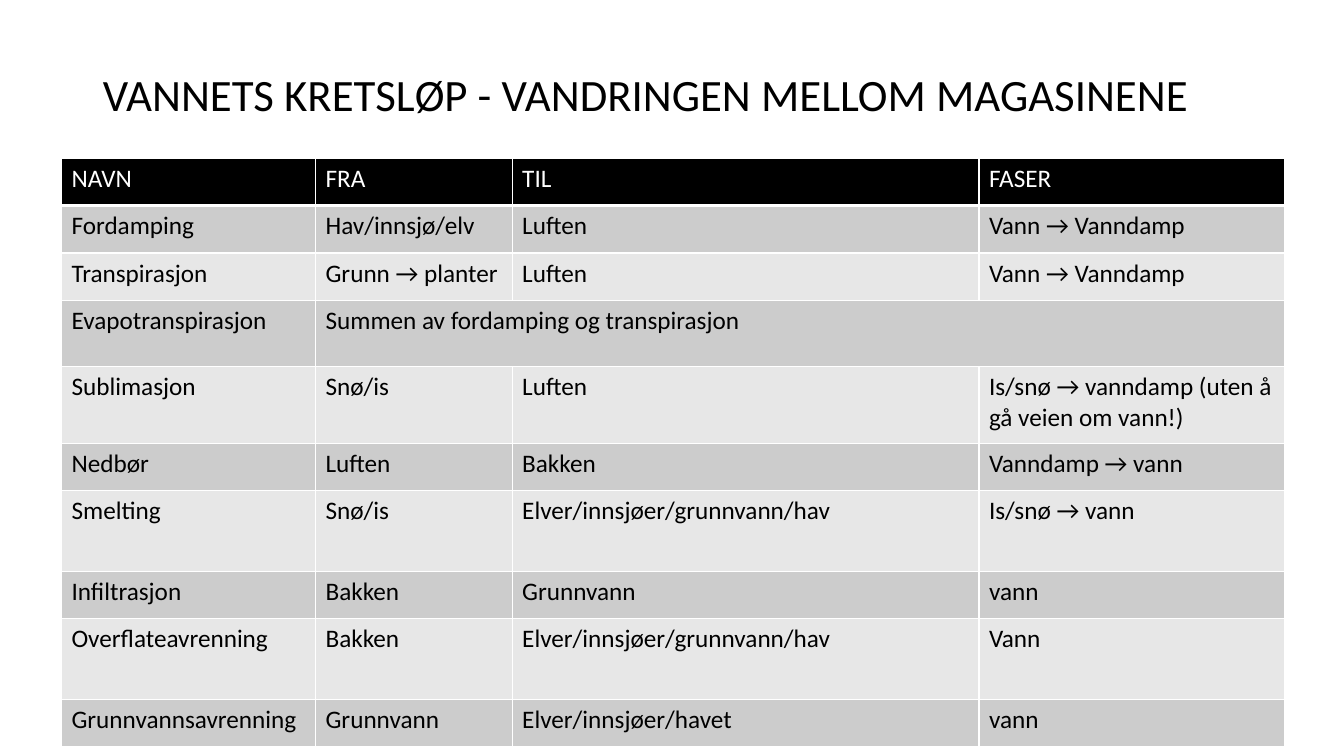
from lxml.etree import SubElement
from pptx import Presentation
from pptx.dml.color import RGBColor
from pptx.enum.text import MSO_ANCHOR, MSO_AUTO_SIZE, PP_ALIGN
from pptx.oxml.ns import qn
from pptx.util import Inches, Pt

# Content: None marks a cell joined with the one on its left
HEADING = "VANNETS KRETSLØP - VANDRINGEN MELLOM MAGASINENE"
PROCESSES = [
    ("NAVN", "FRA", "TIL", "FASER"),
    ("Fordamping", "Hav/innsjø/elv", "Luften", "Vann → Vanndamp"),
    ("Transpirasjon", "Grunn → planter", "Luften", "Vann → Vanndamp"),
    ("Evapotranspirasjon", "Summen av fordamping og transpirasjon", None, None),
    ("Sublimasjon", "Snø/is", "Luften", "Is/snø → vanndamp (uten å gå veien om vann!)"),
    ("Nedbør", "Luften", "Bakken", "Vanndamp → vann"),
    ("Smelting", "Snø/is", "Elver/innsjøer/grunnvann/hav", "Is/snø → vann"),
    ("Infiltrasjon", "Bakken", "Grunnvann", "vann"),
    ("Overflateavrenning", "Bakken", "Elver/innsjøer/grunnvann/hav", "Vann"),
    ("Grunnvannsavrenning", "Grunnvann", "Elver/innsjøer/havet", "vann"),
]

# Layout and style
COLUMN_WIDTHS = [2.52, 1.95, 4.63, 3.03]
ROW_HEIGHT = 0.47
TALL_ROWS = {3: 0.66, 4: 0.76, 6: 0.8, 8: 0.8}
FONT = "Calibri"
COLORS = {"header": "000000", "odd": "CCCCCC", "even": "E7E7E7",
          "rule": "FFFFFF", "text": "000000", "header_text": "FFFFFF"}


def write(paragraph, text, size, color):
    run = paragraph.add_run()
    run.text = text
    run.font.name = FONT
    run.font.size = Pt(size)
    run.font.color.rgb = RGBColor.from_string(COLORS[color])


def add_borders(cell, header):
    properties = cell._tc.get_or_add_tcPr()
    for side in "LRTB":
        width = 3 if header and side == "B" else 1
        line = SubElement(properties, qn(f"a:ln{side}"), w=str(Pt(width)))
        fill = SubElement(line, qn("a:solidFill"))
        SubElement(fill, qn("a:srgbClr"), val=COLORS["rule"])


def main():
    prs = Presentation()
    prs.slide_width, prs.slide_height = Inches(13.33), Inches(7.5)
    slide = prs.slides.add_slide(prs.slide_layouts[5])

    # Title
    title = slide.shapes.title
    title.left, title.top = Inches(0.92), Inches(0.07)
    title.width, title.height = Inches(11.5), Inches(1.78)
    title.text_frame.vertical_anchor = MSO_ANCHOR.MIDDLE
    title.text_frame.auto_size = MSO_AUTO_SIZE.NONE
    heading = title.text_frame.paragraphs[0]
    heading.alignment = PP_ALIGN.LEFT
    heading.line_spacing = 0.9
    write(heading, HEADING, 32, "text")

    # Table grid
    heights = [TALL_ROWS.get(row, ROW_HEIGHT) for row in range(len(PROCESSES))]
    table = slide.shapes.add_table(
        len(heights), len(COLUMN_WIDTHS), Inches(0.61), Inches(1.57),
        Inches(sum(COLUMN_WIDTHS)), Inches(sum(heights))).table
    for column, width in zip(table.columns, COLUMN_WIDTHS):
        column.width = Inches(width)
    for row, height in zip(table.rows, heights):
        row.height = Inches(height)

    # Table cells
    for r, process in enumerate(PROCESSES):
        band = "header" if r == 0 else "odd" if r % 2 else "even"
        for c, text in enumerate(process):
            cell = table.cell(r, c)
            add_borders(cell, r == 0)
            cell.fill.solid()
            cell.fill.fore_color.rgb = RGBColor.from_string(COLORS[band])
            if text is not None:
                write(cell.text_frame.paragraphs[0], text, 18,
                      "text" if r else "header_text")
        if None in process:
            first = process.index(None) - 1
            table.cell(r, first).merge(table.cell(r, len(process) - 1))

    prs.save("out.pptx")


if __name__ == "__main__":
    main()
